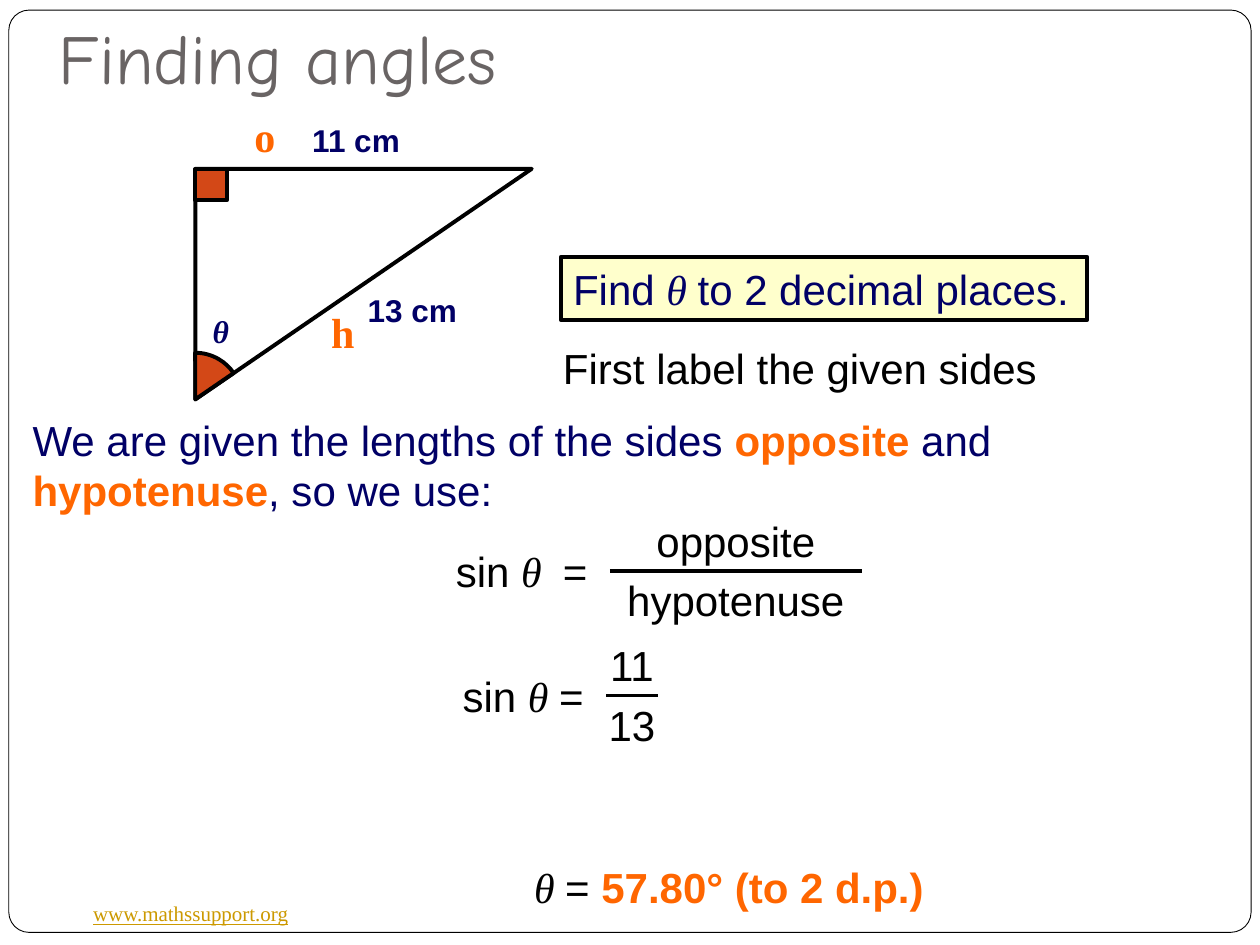
import math

import pptx
import pptx.dml.color
import pptx.enum.shapes
import pptx.enum.text
import pptx.util
from lxml import etree

COLORS = {
    "black": "000000", "white": "FFFFFF", "navy": "010066", "orange": "FF6600",
    "rust": "D34817", "cream": "FFFFCC", "gold": "CC9900", "gray": "696464",
}
SANS, SERIF, TITLE_FONT = "Arial", "Times New Roman", "Comic Neue"
COLUMNS, ROWS = 100, 75
CELL = pptx.util.Inches(10) / COLUMNS
ROW = 5  # height of a 24 pt line of text, in grid rows

SHAPES = pptx.enum.shapes.MSO_SHAPE
ALIGN = pptx.enum.text.PP_ALIGN
ANCHOR = pptx.enum.text.MSO_ANCHOR


def grid(*lengths):
    return [pptx.util.Emu(round(length * CELL)) for length in lengths]


def rgb(name):
    return pptx.dml.color.RGBColor.from_string(COLORS[name])


def run(text, color="black", font=SANS, bold=False, italic=False, underline=False):
    return dict(text=text, color=color, font=font, bold=bold, italic=italic,
                underline=underline)


def theta(text="θ ", color="black", bold=False):
    return run(text, color, SERIF, bold, italic=True)


def write(frame, runs, size=24, align=ALIGN.LEFT, wrap=False):
    frame.word_wrap = wrap
    paragraph = frame.paragraphs[0]
    paragraph.alignment = align
    for part in runs:
        piece = paragraph.add_run()
        piece.text = part["text"]
        font = piece.font
        font.size = pptx.util.Pt(size)
        font.name = part["font"]
        font.bold, font.italic = part["bold"], part["italic"]
        font.underline = part["underline"]
        font.color.rgb = rgb(part["color"])


def add_text(slide, box, runs, **options):
    frame = slide.shapes.add_textbox(*grid(*box)).text_frame
    write(frame, runs, **options)
    return frame


def add_shape(slide, kind, box, fill=None, line_width=2.25):
    shape = slide.shapes.add_shape(kind, *grid(*box))
    shape.shadow.inherit = False
    if fill:
        shape.fill.solid()
        shape.fill.fore_color.rgb = rgb(fill)
    else:
        shape.fill.background()
    shape.line.color.rgb = rgb("black")
    shape.line.width = pptx.util.Pt(line_width)
    return shape


def add_bar(slide, left, top, width):
    bar = slide.shapes.add_connector(pptx.enum.shapes.MSO_CONNECTOR.STRAIGHT,
                                     *grid(left, top, left + width, top))
    bar.line.color.rgb = rgb("black")
    bar.line.width = pptx.util.Pt(2.25)
    properties = bar._element.spPr
    etree.SubElement(properties, properties.getparent().nsmap["a"].join("{}") + "effectLst")


def frame_page(slide, left, top, width, height):
    border = add_shape(slide, SHAPES.ROUNDED_RECTANGLE, (left, top, width, height), "white", 0.5)
    border.adjustments[0] = 0.022
    # Site address
    add_text(slide, (left + 5.7, top + height - 3, 17.7, 3),
             [run("www.mathssupport.org", "gold", SERIF, underline=True)], size=12)
    # Title
    title = add_text(slide, (left + 3, top - 0.9, 85.4, 8.9),
                     [run("Finding angles", "gray", TITLE_FONT)], size=40, wrap=True)
    title.vertical_anchor = ANCHOR.BOTTOM
    title.margin_bottom = pptx.util.Inches(0.1)


def draw_triangle(slide, left, top, width, height):
    # Turned a quarter, so the right angle sits at the top left
    triangle = add_shape(slide, SHAPES.RIGHT_TRIANGLE,
                         (left + (width - height) / 2, top + (height - width) / 2, height, width))
    triangle.rotation = 90
    # Angle markers
    radius = 3.7
    wedge = add_shape(slide, SHAPES.PIE,
                      (left - radius, top + height - radius, 2 * radius, 2 * radius), "rust")
    angle = math.degrees(math.atan2(width, height))
    for index, degrees in enumerate((270, 270 + angle - 360 * (angle >= 90))):
        wedge.adjustments[index] = degrees * 60000 / 100000
    add_shape(slide, SHAPES.RECTANGLE, (left, top, 2.5, 2.5), "rust")
    # Side lengths, angle and side names
    labels = [
        (0.4, 10.9, 3.3, 4, 18, theta("θ", "navy", bold=True)),
        (12.7, 9.2, 9.2, 4, 18, run("13 cm", "navy", bold=True)),
        (8.3, -4.3, 9, 4, 18, run("11 cm", "navy", bold=True)),
        (9.8, 10.4, 4.1, ROW, 24, run("h", "orange", SERIF, bold=True)),
        (3.7, -5.1, 3.8, ROW, 24, run("o", "orange", SERIF, bold=True)),
    ]
    for dx, dy, wide, high, size, label in labels:
        add_text(slide, (left + dx, top + dy, wide, high), [label], size=size)


def place_task(slide, left, top, width, height):
    question = add_shape(slide, SHAPES.RECTANGLE, (left, top, width, height), "cream")
    write(question.text_frame, [run("Find ", "navy"), theta(color="navy"),
                                run("to 2 decimal places.", "navy")])
    add_text(slide, (left - 0.8, top + height + 1.3, width + 4.6, ROW),
             [run("First label the given sides")], wrap=True)


def place_reason(slide, left, top, width, height):
    add_text(slide, (left, top, width, height), [
        run("We are given the lengths of the sides ", "navy"),
        run("opposite", "orange", bold=True), run(" and ", "navy"),
        run("hypotenuse", "orange", bold=True), run(", so we use:", "navy"),
    ], wrap=True)


def place_equation(slide, left, top, bar_width, left_side, numerator, denominator):
    """The fraction bar starts at left, top; the other parts follow from it."""
    add_text(slide, (left - 15.8, top - 2.5, 15, ROW), left_side, align=ALIGN.RIGHT, wrap=True)
    for term, term_top in ((numerator, top - 4.9), (denominator, top - 0.2)):
        add_text(slide, (left - 2, term_top, bar_width + 4, ROW), [run(term)],
                 align=ALIGN.CENTER, wrap=True)
    add_bar(slide, left, top, bar_width)


def place_answer(slide, left, top, width, height):
    add_text(slide, (left, top, width, height),
             [theta(), run("="), run(" 57.80° (to 2 d.p.)", "orange", bold=True)])


def main():
    deck = pptx.Presentation()
    deck.slide_width, deck.slide_height = grid(COLUMNS, ROWS)
    slide = deck.slides.add_slide(deck.slide_layouts[6])

    frame_page(slide, 0.7, 0.8, COLUMNS - 1.4, ROWS - 1.8)
    place_reason(slide, 1.6, 32.4, 97.2, 9.1)
    place_equation(slide, 48.4, 45.3, 20, [run("sin "), theta("θ  "), run("=")],
                   "opposite", "hypotenuse")
    place_equation(slide, 48.1, 55.2, 4.1, [run("sin "), theta(), run("=")], "11", "13")
    place_answer(slide, 41.4, 67.9, 33.2, ROW)
    draw_triangle(slide, 15.5, 13.4, 26.7, 18.3)
    place_task(slide, 44.5, 20.4, 41.8, ROW)
    deck.save("out.pptx")


if __name__ == "__main__":
    main()
